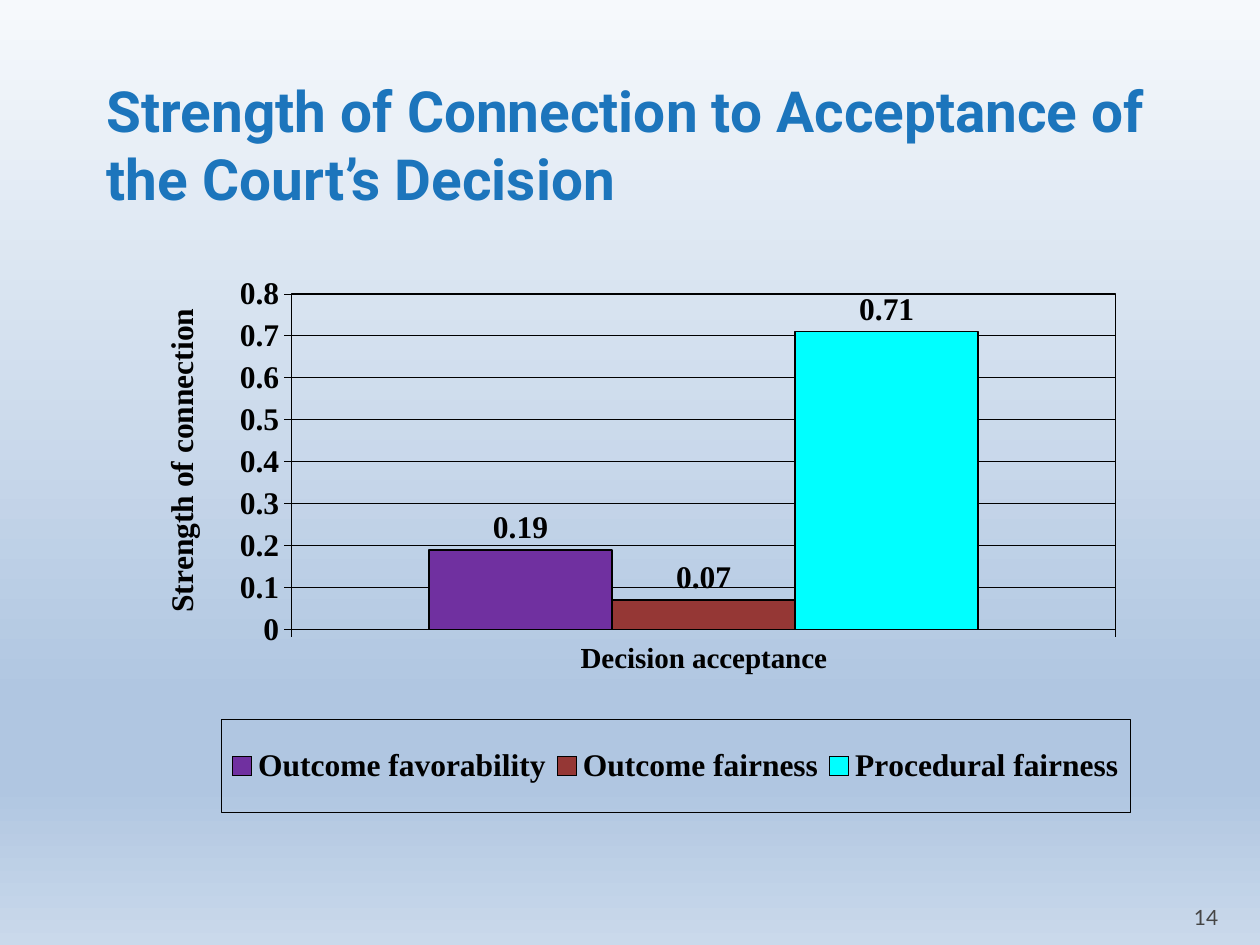
from dataclasses import dataclass

from lxml import etree
from pptx import Presentation
from pptx import util as u
from pptx.chart.data import CategoryChartData
from pptx.dml.color import RGBColor
from pptx.enum import chart as ch, text
from pptx.oxml import parse_xml
from pptx.oxml.ns import nsdecls, qn

HUES = {"title": "1C75BC", "num": "454545", "ink": "000000",
        "favor": "7030A0", "fair": "953735", "proc": "00FFFF"}
STOPS = [(0, "F6F9FC"), (74, "B0C6E1"), (83, "B0C6E1"), (100, "CAD9EB")]
SERIF = "Times New Roman"


@dataclass
class Bar:
    name: str
    value: float
    hue: str


BARS = [Bar("Outcome favorability", 0.19, "favor"),
        Bar("Outcome fairness", 0.07, "fair"),
        Bar("Procedural fairness", 0.71, "proc")]


def style(font, face: str, size: float, hue: str, bold: bool = True) -> None:
    font.name, font.size, font.bold = face, u.Pt(size), bold
    font.color.rgb = RGBColor.from_string(HUES[hue])


def ink(line, width: float) -> None:
    line.color.rgb = RGBColor.from_string(HUES["ink"])
    line.width = u.Pt(width)


def shade(slide) -> None:
    fill = slide.background.fill
    fill.gradient()
    fill.gradient_angle = 270
    group = slide.element.xpath(".//a:gsLst")[0]
    for old in list(group):
        group.remove(old)
    for pos, hue in STOPS:
        stop = etree.SubElement(group, qn("a:gs"), pos=str(pos * 1000))
        etree.SubElement(stop, qn("a:srgbClr"), val=hue)


def place(part, index: int, inner: bool = False, **sides: float) -> None:
    for old in part.findall(qn("c:layout")):
        part.remove(old)
    layout = etree.Element(qn("c:layout"))
    manual = etree.SubElement(layout, qn("c:manualLayout"))
    if inner:
        etree.SubElement(manual, qn("c:layoutTarget"), val="inner")
    for side in "xy":
        etree.SubElement(manual, qn(f"c:{side}Mode"), val="edge")
    for side, value in sides.items():
        etree.SubElement(manual, qn(f"c:{side}"), val=str(value))
    part.insert(index, layout)


def border(width: float):
    return parse_xml(
        f'<c:spPr {nsdecls("c", "a")}><a:noFill/><a:ln w="{u.Pt(width)}"><a:solidFill>'
        f'<a:srgbClr val="{HUES["ink"]}"/></a:solidFill></a:ln></c:spPr>')


def draw_axes(chart) -> None:
    for axis, size in ((chart.category_axis, 16.6), (chart.value_axis, 18)):
        style(axis.tick_labels.font, SERIF, size, "ink")
        axis.major_tick_mark = ch.XL_TICK_MARK.OUTSIDE
        axis.minor_tick_mark = ch.XL_TICK_MARK.NONE
        ink(axis.format.line, 0.23)
    axis = chart.value_axis
    axis.minimum_scale, axis.maximum_scale, axis.major_unit = 0, 0.8, 0.1
    ink(axis.major_gridlines.format.line, 0.23)
    run = axis.axis_title.text_frame.paragraphs[0].add_run()
    run.text = "Strength of connection"
    style(run.font, SERIF, 18, "ink")
    place(chart.element.xpath(".//c:valAx/c:title")[0], 1, x=0.03, y=0.09)


def draw_bars(chart) -> None:
    plot = chart.plots[0]
    plot.gap_width, plot.overlap, plot.vary_by_categories = 150, 0, False
    for row, bar in zip(plot.series, BARS):
        row.format.fill.solid()
        row.format.fill.fore_color.rgb = RGBColor.from_string(HUES[bar.hue])
        ink(row.format.line, 0.92)
        tags = row.data_labels
        tags.show_value = True
        tags.position = ch.XL_LABEL_POSITION.OUTSIDE_END
        style(tags.font, SERIF, 18, "ink")
    area = chart.element.xpath(".//c:plotArea")[0]
    place(area, 0, True, x=0.165, y=0.074, w=0.821, h=0.595)
    area.append(border(0.92))


def draw_key(chart) -> None:
    chart.has_legend = True
    key = chart.legend
    key.position = ch.XL_LEGEND_POSITION.BOTTOM
    key.include_in_layout = False
    style(key.font, SERIF, 18, "ink")
    part = chart.element.xpath(".//c:legend")[0]
    place(part, 1, x=0.095, y=0.828, w=0.906, h=0.165)
    part.find(qn("c:txPr")).addprevious(border(0.23))


def draw_chart(slide) -> None:
    data = CategoryChartData()
    data.categories = ["Decision acceptance"]
    for bar in BARS:
        data.add_series(bar.name, [bar.value])
    chart = slide.shapes.add_chart(
        ch.XL_CHART_TYPE.COLUMN_CLUSTERED, u.Cm(2.54), u.Cm(5.08),
        u.Cm(20.24), u.Cm(11.38), data).chart
    chart.has_title = False
    style(chart.font, SERIF, 16.6, "ink")
    draw_axes(chart)
    draw_bars(chart)
    draw_key(chart)


def write(box, words: str, face: str, size: float, hue: str, bold: bool, align, anchor):
    frame = box.text_frame
    frame.word_wrap = True
    frame.auto_size = text.MSO_AUTO_SIZE.NONE
    frame.vertical_anchor = anchor
    para = frame.paragraphs[0]
    para.alignment = align
    run = para.add_run()
    run.text = words
    style(run.font, face, size, hue, bold)
    return frame


def main() -> None:
    deck = Presentation()
    deck.slide_width, deck.slide_height = u.Cm(25.4), u.Cm(19.05)
    slide = deck.slides.add_slide(deck.slide_layouts[5])
    shade(slide)

    title = slide.shapes.title
    title.left, title.top = u.Cm(1.9), u.Cm(1.9)
    title.width, title.height = u.Cm(22.86), u.Cm(1.98)
    frame = write(title, "Strength of Connection to Acceptance of the Court’s Decision",
                  "Roboto", 32.4, "title", True, text.PP_ALIGN.LEFT, text.MSO_ANCHOR.MIDDLE)
    frame.margin_right = u.Cm(0.13)

    draw_chart(slide)

    num = slide.shapes.add_textbox(u.Cm(22.78), u.Cm(17.98), u.Cm(2.03), u.Cm(0.76))
    frame = write(num, "14", "Lato", 12, "num", False,
                  text.PP_ALIGN.RIGHT, text.MSO_ANCHOR.BOTTOM)
    frame.margin_bottom = 0

    deck.save("out.pptx")


if __name__ == "__main__":
    main()
